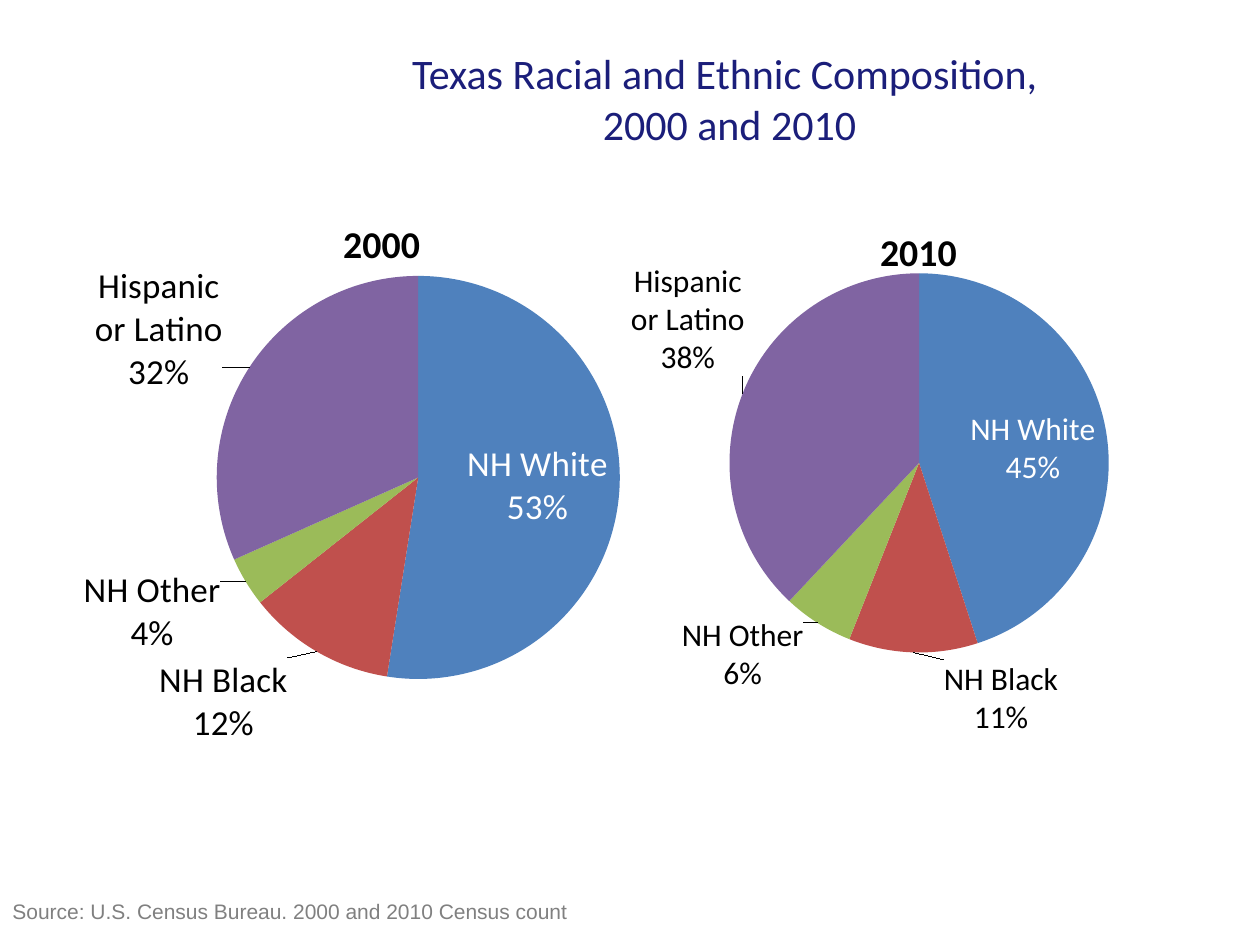
from lxml.etree import SubElement
from pptx import Presentation
from pptx.chart.data import CategoryChartData
from pptx.dml.color import RGBColor
from pptx.enum.chart import XL_CHART_TYPE, XL_LABEL_POSITION
from pptx.enum.text import PP_ALIGN
from pptx.oxml.ns import qn
from pptx.util import Inches, Pt

COLORS = {"title": "1B1E7A", "source": "808080", "black": "000000", "white": "FFFFFF",
          "NH White": "4F81BD", "NH Black": "C0504D", "NH Other": "9BBB59",
          "Hispanic or Latino": "8064A2"}
GROUPS = ["NH White", "NH Black", "NH Other", "Hispanic or Latino"]
TITLE = ["Texas Racial and Ethnic Composition, ", "2000 and 2010"]
SOURCE = ["Source: U.S. Census Bureau. 2000 and 2010 Census count"]
PIES = [
    {"year": "2000", "shares": [53, 12, 4, 32], "frame": (0.25, 1.67, 5.58, 4.25),
     "plot": (1.33, 0.52, 3.48, 3.2), "title_at": (2.42, 0), "label_size": 20,
     "offsets": [(0.15, 0), (-0.2, 0), (-0.15, -0.14), (-0.16, 0.24)]},
    {"year": "2010", "shares": [45, 11, 6, 38], "frame": (4.75, 1.58, 5, 4.58),
     "plot": (0.7, 0.59, 3.69, 3.01), "title_at": (2.18, 0.15), "label_size": 18,
     "offsets": [(0.16, 0), (0.7, 0), (-0.08, -0.1), (0.07, -0.11)]},
]


def color(name):
    return RGBColor.from_string(COLORS[name])


def style(font, name, size, shade, bold=False):
    font.name, font.size, font.bold = name, Pt(size), bold
    font.color.rgb = color(shade)


def add_text(page, lines, frame, font_name, size, shade, align):
    box = page.shapes.add_textbox(*map(Inches, frame))
    box.text_frame.word_wrap = True
    box.text_frame.text = "\n".join(lines)
    for para in box.text_frame.paragraphs:
        para.alignment = align
        style(para.font, font_name, size, shade)


def place(parent, index, frame, inches, **modes):
    for old in parent.findall(qn("c:layout")):
        parent.remove(old)
    layout = parent.makeelement(qn("c:layout"))
    parent.insert(index, layout)
    manual = SubElement(layout, qn("c:manualLayout"))
    width, height = frame[2:]
    fractions = [length / whole for length, whole in zip(inches, (width, height) * 2)]
    for tag, value in [*modes.items(), *zip("xywh", fractions)]:
        SubElement(manual, qn(f"c:{tag}")).set("val", str(value))


def add_pie(page, pie):
    frame = pie["frame"]
    data = CategoryChartData()
    data.categories = GROUPS
    data.add_series(pie["year"], pie["shares"])
    chart = page.shapes.add_chart(XL_CHART_TYPE.PIE, *map(Inches, frame), data).chart
    style(chart.font, "Calibri", 18, "black")
    chart.has_legend = False
    chart.has_title = True
    heading = chart.chart_title.text_frame
    heading.text = pie["year"]
    style(heading.paragraphs[0].font, "Calibri", 21.6, "black", True)
    place(chart.chart_title._element, 1, frame, pie["title_at"], xMode="edge", yMode="edge")
    place(chart._chartSpace.chart.plotArea, 0, frame, pie["plot"],
          layoutTarget="inner", xMode="edge", yMode="edge")

    plot = chart.plots[0]
    plot.vary_by_categories = True
    series = plot.series[0]
    labels = series.data_labels
    labels.show_category_name = labels.show_value = True
    labels.number_format, labels.number_format_is_linked = '0"%"', False
    labels.position = XL_LABEL_POSITION.BEST_FIT
    style(labels.font, "Calibri", pie["label_size"], "black")
    leader = labels._element.find(qn("c:showLeaderLines"))
    if leader is None:
        leader = SubElement(labels._element, qn("c:showLeaderLines"))
    leader.set("val", "1")
    separator = labels._element.makeelement(qn("c:separator"))
    separator.text = "\n"
    leader.addprevious(separator)

    for index, (group, offset) in enumerate(zip(GROUPS, pie["offsets"])):
        inside = group == "NH White"
        point = series.points[index]
        point.format.fill.solid()
        point.format.fill.fore_color.rgb = color(group)
        label = point.data_label
        style(label.font, "Calibri", pie["label_size"], "white" if inside else "black")
        label.position = XL_LABEL_POSITION.CENTER if inside else XL_LABEL_POSITION.BEST_FIT
        element = label._dLbl
        for tag, shown in (("showVal", "1"), ("showCatName", "1"), ("showPercent", "0")):
            element.find(qn(f"c:{tag}")).set("val", shown)
        SubElement(element, qn("c:separator")).text = "\n"
        number = element.makeelement(qn("c:numFmt"))
        number.set("formatCode", '0"%"')
        number.set("sourceLinked", "0")
        element.insert(1, number)
        place(element, 1, frame, offset)


deck = Presentation()
deck.slide_width, deck.slide_height = Inches(10), Inches(7.5)
page = deck.slides.add_slide(deck.slide_layouts[6])
add_text(page, TITLE, (1.75, 0.33, 8.08, 1.08), "Calibri", 24, "title", PP_ALIGN.CENTER)
for pie in PIES:
    add_pie(page, pie)
add_text(page, SOURCE, (0, 7.08, 8.75, 0.5), "Arial", 12, "source", PP_ALIGN.LEFT)
deck.save("out.pptx")
